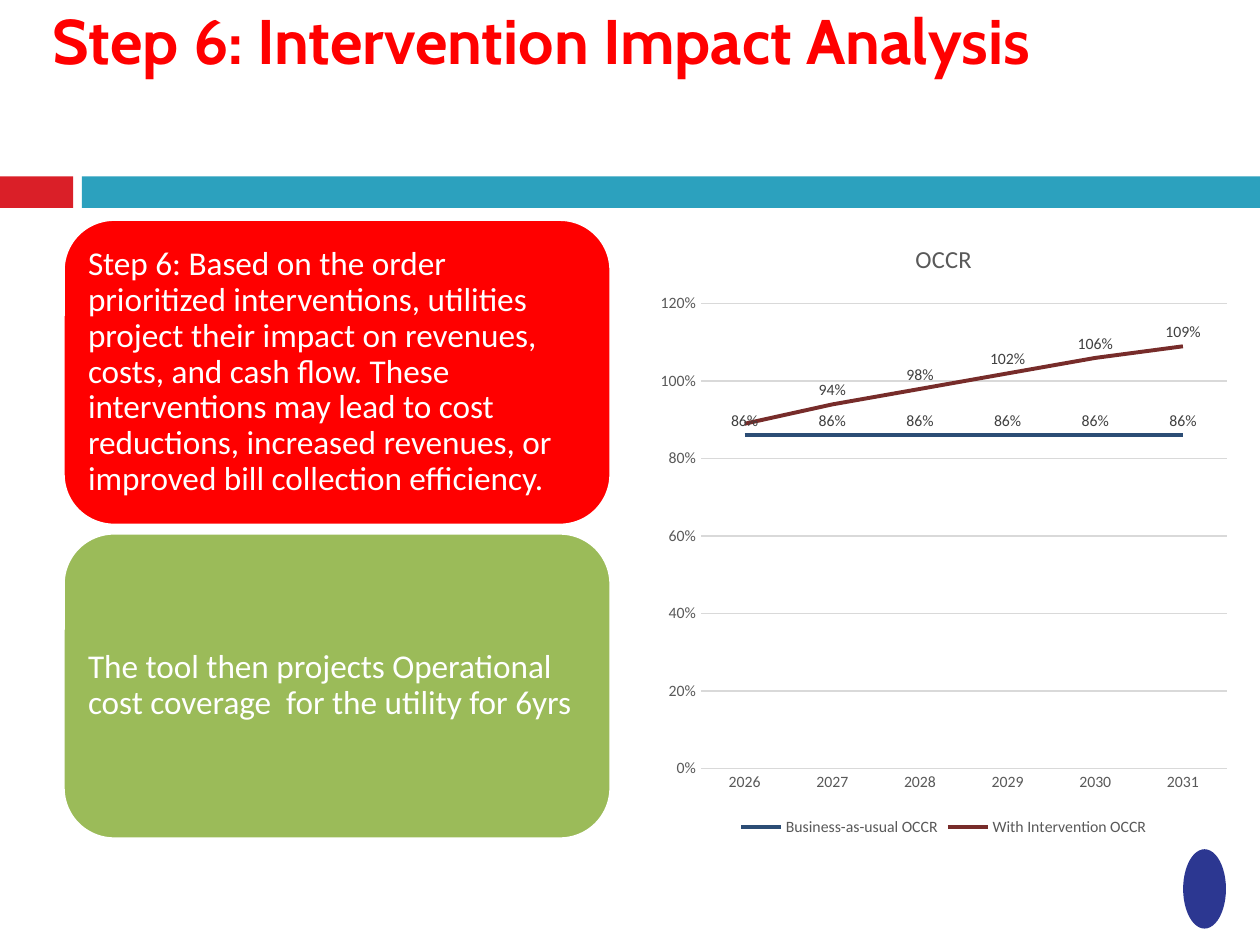
from dataclasses import dataclass

from lxml import etree
from pptx import Presentation
from pptx.chart.data import CategoryChartData
from pptx.dml.color import RGBColor
from pptx.enum.chart import (XL_CHART_TYPE, XL_LABEL_POSITION, XL_LEGEND_POSITION,
                             XL_MARKER_STYLE, XL_TICK_MARK)
from pptx.enum.shapes import MSO_SHAPE
from pptx.enum.text import MSO_ANCHOR, MSO_AUTO_SIZE, PP_ALIGN
from pptx.oxml.ns import qn
from pptx.util import Inches, Pt

RED = RGBColor(0xFF, 0x00, 0x00)
GREEN = RGBColor(0x9B, 0xBB, 0x59)
WHITE = RGBColor(0xFF, 0xFF, 0xFF)
BAND_RED = RGBColor(0xDA, 0x1F, 0x28)
BAND_BLUE = RGBColor(0x2C, 0xA1, 0xBE)
DROP_BLUE = RGBColor(0x2C, 0x37, 0x91)
NAVY = RGBColor(0x2C, 0x4D, 0x75)
MAROON = RGBColor(0x77, 0x2C, 0x2A)
GRID_GREY = RGBColor(0xD9, 0xD9, 0xD9)
TEXT_GREY = RGBColor(0x59, 0x59, 0x59)
LABEL_GREY = RGBColor(0x40, 0x40, 0x40)


@dataclass
class Block:
    left: float
    top: float
    width: float
    height: float
    fill: RGBColor
    kind: MSO_SHAPE = MSO_SHAPE.RECTANGLE


@dataclass
class Card:
    text: str
    fill: RGBColor


@dataclass
class Line:
    name: str
    values: tuple
    color: RGBColor


BLOCKS = [
    Block(0, 1.4, 0.58, 0.25, BAND_RED),
    Block(0.65, 1.4, 9.35, 0.25, BAND_BLUE),
    Block(9.39, 6.74, 0.34, 0.63, DROP_BLUE, MSO_SHAPE.OVAL),
]
CARDS = [
    Card("Step 6: Based on the order prioritized interventions, utilities project "
         "their impact on revenues, costs, and cash flow. These interventions may "
         "lead to cost reductions, increased revenues, or improved bill collection "
         "efficiency.", RED),
    Card("The tool then projects Operational cost coverage  for the utility for 6yrs",
         GREEN),
]
CARD_TOP, CARD_HEIGHT, CARD_GAP = 1.74, 2.43, 0.06
YEARS = [str(year) for year in range(2026, 2032)]
LINES = [
    Line("Business-as-usual OCCR", (0.86,) * len(YEARS), NAVY),
    Line("With Intervention OCCR", (0.89, 0.94, 0.98, 1.02, 1.06, 1.09), MAROON),
]


def set_font(font, size: float, color: RGBColor, name: str = "Calibri",
             bold: bool = False) -> None:
    font.name, font.size, font.bold = name, Pt(size), bold
    font.color.rgb = color


def set_margins(frame, inches: float) -> None:
    frame.margin_left = frame.margin_right = Inches(inches)
    frame.margin_top = frame.margin_bottom = Inches(inches)


def add_block(page, block: Block):
    shape = page.shapes.add_shape(
        block.kind, Inches(block.left), Inches(block.top),
        Inches(block.width), Inches(block.height))
    shape.shadow.inherit = False
    shape.fill.solid()
    shape.fill.fore_color.rgb = block.fill
    shape.line.fill.background()
    return shape


def add_title(page, text: str) -> None:
    title = page.shapes.title
    title.left, title.top = Inches(0.42), Inches(0.01)
    title.width, title.height = Inches(9.15), Inches(1.23)
    frame = title.text_frame
    frame.auto_size = MSO_AUTO_SIZE.NONE
    frame.vertical_anchor = MSO_ANCHOR.TOP
    set_margins(frame, 0)
    para = frame.paragraphs[0]
    para.alignment = PP_ALIGN.LEFT
    span = para.add_run()
    span.text = text
    set_font(span.font, 36, RED, "Cabin", bold=True)


def add_card(page, card: Card, top: float) -> None:
    box = add_block(page, Block(0.5, top, 4.35, CARD_HEIGHT, card.fill,
                                MSO_SHAPE.ROUNDED_RECTANGLE))
    box.line.color.rgb = WHITE
    box.line.width = Pt(2)
    frame = box.text_frame
    frame.word_wrap = True
    frame.vertical_anchor = MSO_ANCHOR.MIDDLE
    set_margins(frame, 0.08)
    para = frame.paragraphs[0]
    para.alignment = PP_ALIGN.LEFT
    para.line_spacing = 0.9
    span = para.add_run()
    span.text = card.text
    set_font(span.font, 19, WHITE)


def style_line(series, line: Line) -> None:
    series.smooth = False
    series.marker.style = XL_MARKER_STYLE.NONE
    series.format.line.color.rgb = line.color
    series.format.line.width = Pt(2.25)
    labels = series.data_labels
    labels.show_value = True
    labels.position = XL_LABEL_POSITION.ABOVE
    labels.number_format, labels.number_format_is_linked = "0%", False
    set_font(labels.font, 9, LABEL_GREY)


def hide_label(series, index: int) -> None:
    label = etree.Element(qn("c:dLbl"))
    etree.SubElement(label, qn("c:idx")).set("val", str(index))
    etree.SubElement(label, qn("c:delete")).set("val", "1")
    series.data_labels._element.insert(0, label)


def add_occr_chart(page) -> None:
    data = CategoryChartData(number_format="0%")
    data.categories = YEARS
    for line in LINES:
        data.add_series(line.name, line.values)
    chart = page.shapes.add_chart(
        XL_CHART_TYPE.LINE, Inches(5.15), Inches(1.73),
        Inches(4.68), Inches(4.95), data).chart
    set_font(chart.font, 10, RGBColor(0, 0, 0))
    chart.plots[0].vary_by_categories = False

    # Chart title and legend
    chart.has_title = True
    span = chart.chart_title.text_frame.paragraphs[0].add_run()
    span.text = "OCCR"
    set_font(span.font, 14, TEXT_GREY)
    chart.chart_title.include_in_layout = False
    chart.has_legend = True
    chart.legend.position = XL_LEGEND_POSITION.BOTTOM
    chart.legend.include_in_layout = False
    set_font(chart.legend.font, 9, TEXT_GREY)

    # Axes
    years, shares = chart.category_axis, chart.value_axis
    for axis in (years, shares):
        axis.major_tick_mark = axis.minor_tick_mark = XL_TICK_MARK.NONE
        set_font(axis.tick_labels.font, 9, TEXT_GREY)
    shares.minimum_scale, shares.maximum_scale, shares.major_unit = 0, 1.2, 0.2
    shares.tick_labels.number_format = "0%"
    shares.tick_labels.number_format_is_linked = False
    shares.format.line.fill.background()
    for rule in (years.format.line, shares.major_gridlines.format.line):
        rule.color.rgb = GRID_GREY
        rule.width = Pt(0.75)

    # Series
    for series, line in zip(chart.plots[0].series, LINES):
        style_line(series, line)
    hide_label(chart.plots[0].series[1], 0)


def main() -> None:
    deck = Presentation()
    deck.slide_width, deck.slide_height = Inches(10), Inches(7.5)
    page = deck.slides.add_slide(deck.slide_layouts[5])

    # Header band and corner mark
    for block in BLOCKS:
        add_block(page, block)
    add_title(page, "Step 6: Intervention Impact Analysis")

    # Text cards on the left, chart on the right
    for row, card in enumerate(CARDS):
        add_card(page, card, CARD_TOP + row * (CARD_HEIGHT + CARD_GAP))
    add_occr_chart(page)

    deck.save("out.pptx")


if __name__ == "__main__":
    main()
